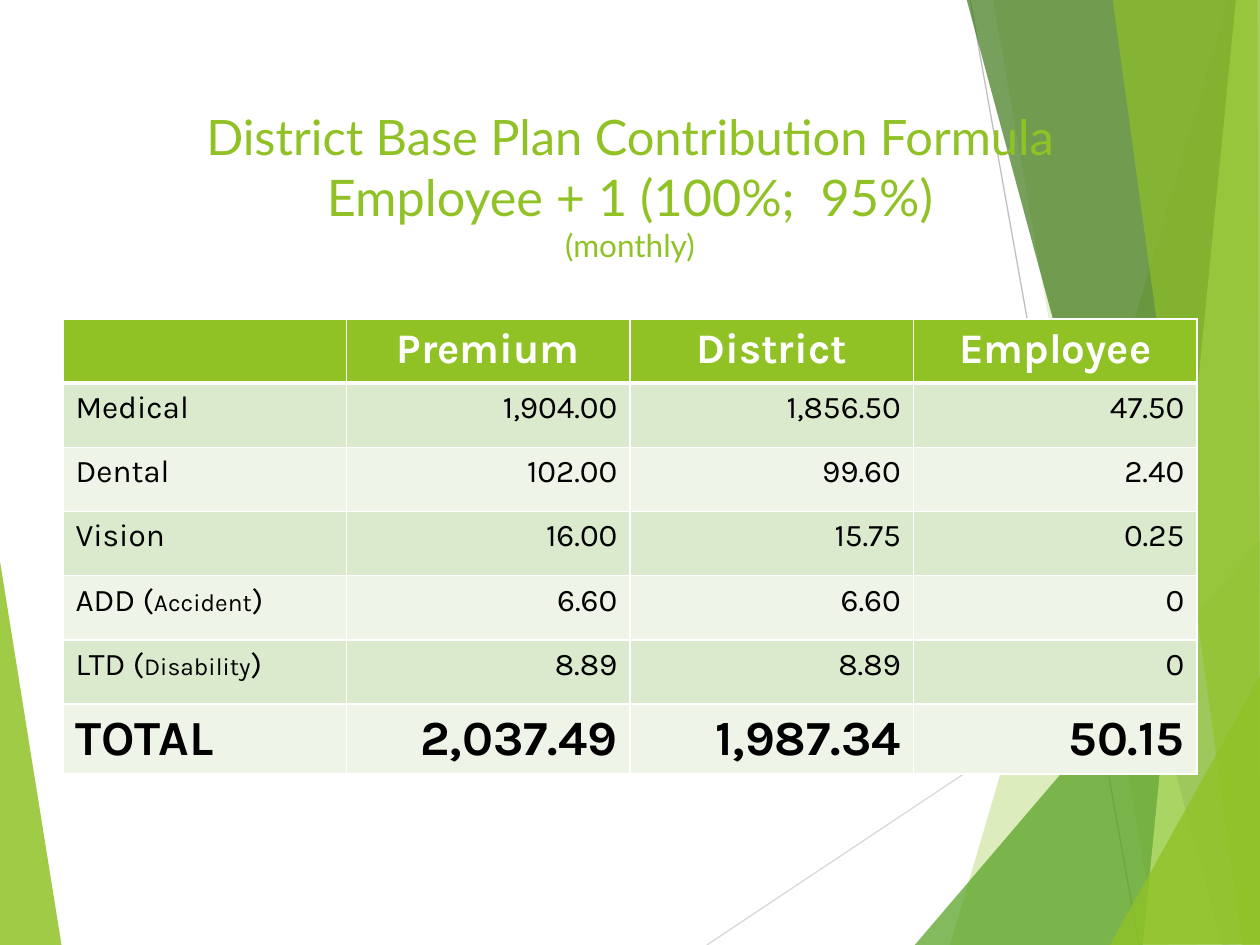
from lxml import etree
from pptx import Presentation
from pptx import util as u
from pptx.dml.color import RGBColor
from pptx.enum import shapes, text
from pptx.oxml import ns

LIME = RGBColor(0x90, 0xC2, 0x26)
GREEN = RGBColor(0x54, 0xA0, 0x21)
DARK = RGBColor(0x3F, 0x78, 0x19)
PALE = RGBColor(0xC0, 0xE4, 0x74)
BAND = RGBColor(0xDB, 0xE9, 0xCD)
LIGHT = RGBColor(0xEE, 0xF4, 0xE8)
GREY = RGBColor(0xBF, 0xBF, 0xBF)
SILVER = RGBColor(0xD9, 0xD9, 0xD9)
WHITE = RGBColor(0xFF, 0xFF, 0xFF)
BLACK = RGBColor(0, 0, 0)

LEFT, MID, RIGHT = text.PP_ALIGN.LEFT, text.PP_ALIGN.CENTER, text.PP_ALIGN.RIGHT

TITLE = [
    ("District Base Plan Contribution Formula", 27.9),
    ("Employee + 1 (100%;  95%)", 28.8),
    ("(monthly)", 18),
]
ROWS = [
    ("", "Premium", "District", "Employee"),
    ("Medical", "1,904.00", "1,856.50", "47.50"),
    ("Dental", "102.00", "99.60", "2.40"),
    ("Vision", "16.00", "15.75", "0.25"),
    (("ADD (", "Accident", ")"), "6.60", "6.60", "0"),
    (("LTD (", "Disability", ")"), "8.89", "8.89", "0"),
    ("TOTAL", "2,037.49", "1,987.34", "50.15"),
]
LEAF = [(-0.01, 4.39), (0.49, 7.51), (-0.01, 7.5)]
RAYS = [((5.61, 7.5), (10.01, 4.57), SILVER), ((7.7, 0), (9.04, 7.5), GREY)]
SHARDS = [
    ([(9.75, 0), (7.54, 7.5), (10.02, 7.51), (10.01, 0.01)], LIME, 30),
    ([(7.88, -0.01), (9.19, 7.5), (10.01, 7.5), (10.01, -0.01)], LIME, 20),
    ([(7.26, 7.5), (10, 4.29), (10.01, 7.5)], GREEN, 72),
    ([(7.67, -0.01), (9.7, 7.5), (10.01, 7.49), (10.01, -0.01)], DARK, 70),
    ([(9.81, -0.01), (9.07, 7.5), (10.01, 7.5), (10, -0.01)], PALE, 70),
    ([(8.83, -0.01), (9.86, 7.5), (10, 7.5), (9.98, -0.01)], LIME, 65),
    ([(8.81, 7.5), (10.01, 5.35), (10.01, 7.49)], LIME, 80),
]


def write(para, words, size=18, font="Karla", color=BLACK, bold=False, align=LEFT):
    para.alignment = align
    run = para.add_run()
    run.text = words
    run.font.size = u.Pt(size)
    run.font.name = font
    run.font.bold = bold
    run.font.color.rgb = color


class Deck:
    font = "Lato"
    edge = WHITE

    def __init__(self):
        self.file = Presentation()
        self.file.slide_width = u.Inches(10)
        self.file.slide_height = u.Inches(7.5)
        self.slide = self.file.slides.add_slide(self.file.slide_layouts[5])

    def shard(self, points, color, alpha):
        spots = [(u.Inches(x), u.Inches(y)) for x, y in points]
        pen = self.slide.shapes.build_freeform(*spots[0])
        pen.add_line_segments(spots[1:], close=True)
        shape = pen.convert_to_shape()
        shape.shadow.inherit = False
        shape.fill.solid()
        shape.fill.fore_color.rgb = color
        shape.line.fill.background()
        tone = shape.element.spPr.find(".//" + ns.qn("a:srgbClr"))
        etree.SubElement(tone, ns.qn("a:alpha"), val=str(alpha * 1000))

    def ray(self, start, end, color):
        ends = [u.Inches(n) for n in start + end]
        line = self.slide.shapes.add_connector(shapes.MSO_CONNECTOR.STRAIGHT, *ends)
        line.line.color.rgb = color
        line.line.width = u.Pt(0.75)
        etree.SubElement(line.element.spPr, ns.qn("a:effectLst"))

    def title(self, lines):
        box = self.slide.shapes.title
        box.element.getparent().append(box.element)
        box.left, box.top = u.Inches(0.5), u.Inches(0.25)
        box.width, box.height = u.Inches(9), u.Inches(2.17)
        frame = box.text_frame
        frame.word_wrap = True
        frame.auto_size = text.MSO_AUTO_SIZE.NONE
        frame.vertical_anchor = text.MSO_ANCHOR.TOP
        frame.margin_top = u.Inches(0.6)
        for i, (words, size) in enumerate(lines):
            para = frame.add_paragraph() if i else frame.paragraphs[0]
            write(para, words, size=size, font=self.font, color=LIME, align=MID)

    def border(self, cell, head):
        props = cell._tc.get_or_add_tcPr()
        for i, side in enumerate(("lnL", "lnR", "lnT", "lnB")):
            width = u.Pt(3 if head and side == "lnB" else 1)
            line = etree.Element(ns.qn("a:" + side), w=str(width))
            fill = etree.SubElement(line, ns.qn("a:solidFill"))
            etree.SubElement(fill, ns.qn("a:srgbClr"), val=str(self.edge))
            props.insert(i, line)

    def table(self, rows):
        frame = self.slide.shapes.add_table(
            len(rows), len(rows[0]),
            u.Inches(0.5), u.Inches(2.53), u.Inches(9), u.Inches(0.51 * len(rows)))
        grid = frame.table
        grid.horz_banding = False
        for r, row in enumerate(rows):
            head, last = r == 0, r == len(rows) - 1
            size = 24 if head else 28 if last else 18
            for c, words in enumerate(row):
                cell = grid.cell(r, c)
                cell.fill.solid()
                cell.fill.fore_color.rgb = LIME if head else BAND if r % 2 else LIGHT
                self.border(cell, head)
                parts = (words,) if isinstance(words, str) else words
                for i, part in enumerate(parts):
                    if part:
                        write(cell.text_frame.paragraphs[0], part,
                              size=14 if i == 1 else size,
                              color=WHITE if head else BLACK,
                              bold=head or last,
                              align=MID if head else RIGHT if c else LEFT)


def main():
    deck = Deck()
    deck.shard(LEAF, LIME, 85)
    for ray in RAYS:
        deck.ray(*ray)
    for shard in SHARDS:
        deck.shard(*shard)
    deck.title(TITLE)
    deck.table(ROWS)
    deck.file.save("out.pptx")


if __name__ == "__main__":
    main()
